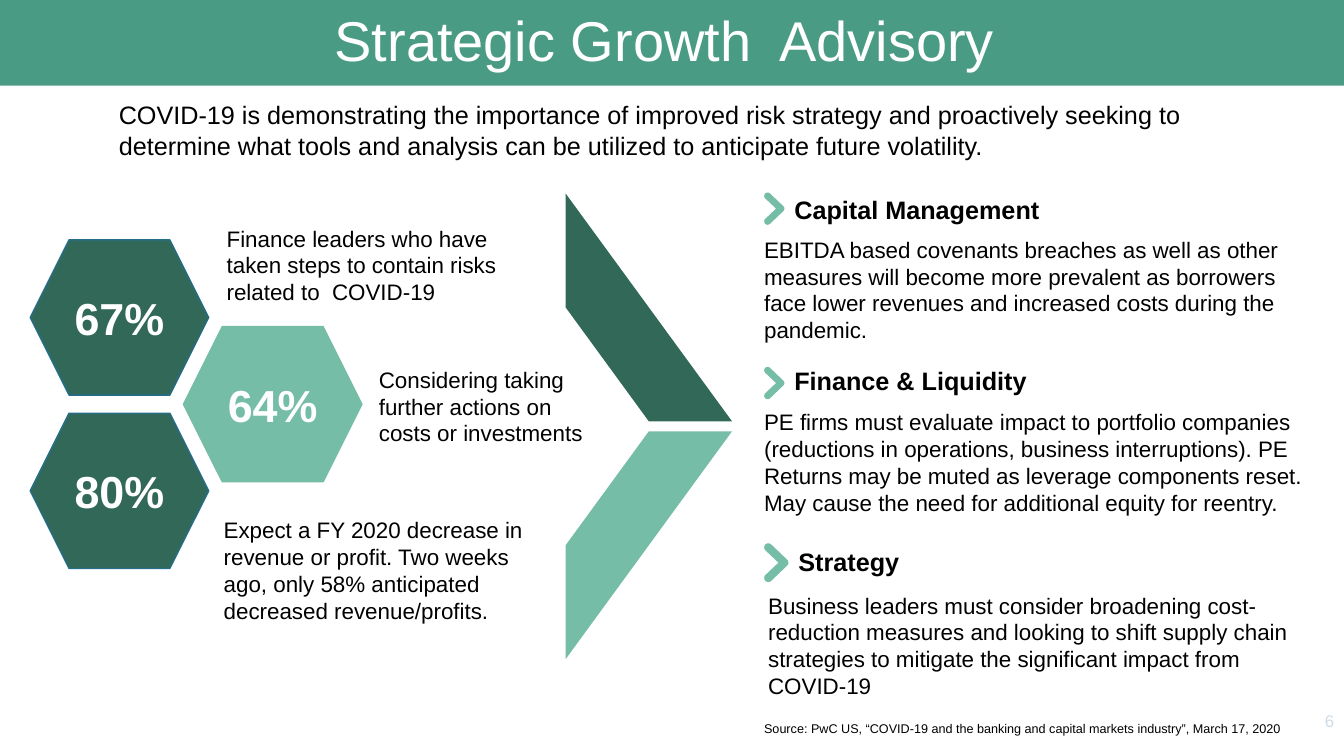
from math import cos, sin, radians, sqrt

from pptx import Presentation
from pptx.dml.color import RGBColor as Rgb
from pptx.enum.shapes import MSO_SHAPE as Shape
from pptx.enum.text import MSO_ANCHOR as Anchor, PP_ALIGN as Align
from pptx.oxml.ns import qn
from pptx.util import Inches, Pt

COLORS = {
    "band": "4A9B83",
    "dark": "316857",
    "mint": "75BDA7",
    "edge": "266D8A",
    "pale": "CEDBE6",
    "white": "FFFFFF",
    "black": "000000",
}
FONT = "Arial"
COLS, ROWS = 133.3, 75
CELL = Inches(0.1)


def cells(*spans):
    return [round(span * CELL) for span in spans]


def tint(name):
    return Rgb.from_string(COLORS[name])


def write(frame, words, size, color="black", bold=False, align=Align.LEFT):
    frame.word_wrap = True
    par = frame.paragraphs[0]
    par.alignment = align
    run = par.add_run()
    run.text = words
    font = run.font
    font.name, font.size, font.bold = FONT, Pt(size), bold
    font.color.rgb = tint(color)
    return par


def label(slide, box, words, size, **style):
    frame = slide.shapes.add_textbox(*cells(*box)).text_frame
    write(frame, words, size, **style)
    return frame


def paint(shape, fill, line=None):
    shape.shadow.inherit = False
    shape.fill.solid()
    shape.fill.fore_color.rgb = tint(fill)
    if line:
        shape.line.color.rgb = tint(line)
        shape.line.width = Pt(1)
    else:
        shape.line.fill.background()


def block(slide, kind, box, fill, line=None):
    shape = slide.shapes.add_shape(kind, *cells(*box))
    paint(shape, fill, line)
    return shape


def header(slide, box):
    band = block(slide, Shape.RECTANGLE, box, "band")
    frame = band.text_frame
    frame.vertical_anchor = Anchor.MIDDLE
    frame.margin_bottom = 0
    par = write(frame, "Strategic Growth  Advisory ", 40, "white", align=Align.CENTER)
    par.line_spacing = 0.9


def stats(slide, box):
    left, top, width, height = box
    wide, tall = 17.7, 15.4
    step = (height - tall) / 2
    facts = [
        ("67%", 0, "dark", "edge", (18.5, -2, 32, 9.1),
         "Finance leaders who have taken steps to contain risks related to  COVID-19"),
        ("64%", width - wide, "mint", "mint", (33.6, 12, 22.6, 9.1),
         "Considering taking further actions on costs or investments"),
        ("80%", 0, "dark", "edge", (18.2, 26.9, 34.5, 11.8),
         "Expect a FY 2020 decrease in revenue or profit. Two weeks ago, "
         "only 58% anticipated decreased revenue/profits."),
    ]
    for row, (share, shift, fill, line, note, words) in enumerate(facts):
        spot = (left + shift, top + row * step, wide, tall)
        hexa = block(slide, Shape.HEXAGON, spot, fill, line)
        hexa.text_frame.vertical_anchor = Anchor.MIDDLE
        write(hexa.text_frame, share, 32, "white", True, Align.CENTER)
        x, y, w, h = note
        label(slide, (left + x, top + y, w, h), words, 16)


def arrow(slide, box):
    left, top, width, height = box
    half = (height - 1) / 2
    block(slide, Shape.DIAGONAL_STRIPE, (left, top + half + 1, width, half), "mint")
    upper = block(slide, Shape.DIAGONAL_STRIPE, (left, top, width, half), "dark")
    upper.element.spPr.find(qn("a:xfrm")).set("flipV", "1")


def chevron(slide, box):
    left, top, width, height = box
    rad = width * 0.17
    mid = top + height / 2
    tip = left + width - rad
    turns = [
        (left + rad, top + rad, 135, 315),
        (tip, mid, -45, 45),
        (left + rad, top + height - rad, 45, 225),
    ]
    dots = [
        (x + rad * cos(radians(deg)), y + rad * sin(radians(deg)))
        for x, y, start, end in turns
        for deg in range(start, end + 1, 15)
    ]
    dots.append((tip - rad * sqrt(2), mid))
    path = [cells(*dot) for dot in dots]
    build = slide.shapes.build_freeform(*path[0])
    build.add_line_segments(path[1:], close=True)
    paint(build.convert_to_shape(), "mint")


def topic(slide, box, head, body, mark, drop, gap):
    left, top, width, height = box
    start = left + 3
    chevron(slide, (start - mark, top + drop, mark, mark * 1.6))
    label(slide, (start, top, width - 3, 4), head, 18, bold=True)
    label(slide, (left, top + gap, width, height - gap), body, 16)


def topics(slide, left):
    topic(slide, (left, 18.8, 56.8, 15.9), "Capital Management",
          "EBITDA based covenants breaches as well as other measures will become "
          "more prevalent as borrowers face lower revenues and increased costs "
          "during the pandemic.", 2, 0.3, 4.1)
    topic(slide, (left, 35.8, COLS - left, 16), "Finance & Liquidity",
          "PE firms must evaluate impact to portfolio companies (reductions in "
          "operations, business interruptions). PE Returns may be muted as leverage "
          "components reset.  May cause the need for additional equity for reentry.",
          2, 0.6, 4.2)
    topic(slide, (left + 0.4, 53.7, COLS - left - 0.4, 16.3), "Strategy",
          "Business leaders must consider broadening cost-reduction measures and "
          "looking to shift supply chain strategies to mitigate the significant "
          "impact from COVID-19", 2.4, 0.2, 4.5)


def footer(slide, left):
    label(slide, (left, 71, 55.1, 2.5),
          "Source: PwC US, “COVID-19 and the banking and capital markets industry”, "
          "March 17, 2020", 9)
    page = label(slide, (COLS - 8.1, 69.5, 8.1, 4), "6", 12,
                 color="pale", align=Align.RIGHT)
    page.vertical_anchor = Anchor.MIDDLE


def main():
    deck = Presentation()
    deck.slide_width, deck.slide_height = cells(COLS, ROWS)
    slide = deck.slides.add_slide(deck.slide_layouts[6])
    right = 74.8
    header(slide, (0, -0.3, COLS, 8.8))
    label(slide, (10.8, 9.4, 118.5, 7.1),
          "COVID-19 is demonstrating the importance of improved risk strategy and "
          "proactively seeking to determine what tools and analysis can be utilized "
          "to anticipate future volatility.", 18)
    arrow(slide, (56.1, 19.2, 16.5, 46.2))
    stats(slide, (3, 23.8, 32.9, 32.6))
    topics(slide, right)
    footer(slide, right)
    deck.save("out.pptx")


if __name__ == "__main__":
    main()
